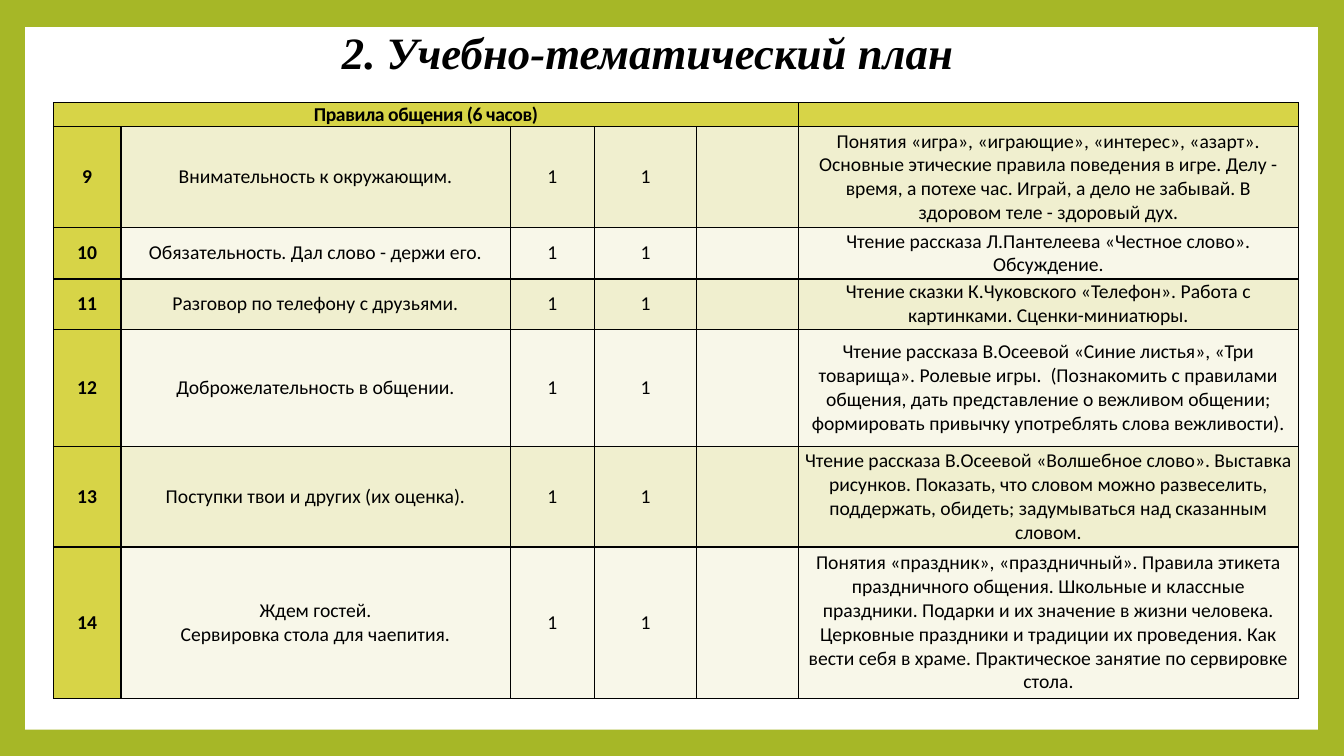
from lxml import etree
from pptx import Presentation
from pptx.dml.color import RGBColor
from pptx.enum.shapes import MSO_SHAPE
from pptx.enum.text import MSO_ANCHOR, PP_ALIGN
from pptx.oxml.ns import qn
from pptx.util import Inches, Pt

RECT = MSO_SHAPE.RECTANGLE
MIDDLE = MSO_ANCHOR.MIDDLE
CENTER = PP_ALIGN.CENTER

COLORS = {
    "frame": "A6B727",
    "panel": "FFFFFF",
    "ink": "000000",
    "head": "D7D447",
    "odd": "F0EFCF",
    "even": "F8F7E9",
}
TITLE_FONT = {"name": "Times New Roman", "size": Pt(32), "bold": True, "italic": True}
CELL_FONT = {"name": "Calibri", "size": Pt(14)}
CELL_BOX = {
    "margin_left": Inches(0.05),
    "margin_right": Inches(0.05),
    "margin_top": 0,
    "margin_bottom": 0,
    "vertical_anchor": MIDDLE,
}
TITLE_BOX = {
    "margin_left": Inches(0.1),
    "margin_right": Inches(0.1),
    "margin_top": 0,
    "margin_bottom": 0,
    "vertical_anchor": MIDDLE,
    "word_wrap": True,
}

COLS = [0.67, 3.86, 0.84, 1.01, 1.01, 4.96]
ROWS = [0.23, 1, 0.51, 0.5, 1.16, 1, 1.5]
HEAD = "Правила общения (6 часов)"
FIRST = 9
TOPICS = [
    ("Внимательность к окружающим.",
     "Понятия «игра», «играющие», «интерес», «азарт». Основные этические правила "
     "поведения в игре. Делу - время, а потехе час. Играй, а дело не забывай. "
     "В здоровом теле - здоровый дух."),
    ("Обязательность. Дал слово - держи его.",
     "Чтение рассказа Л.Пантелеева «Честное слово». Обсуждение."),
    ("Разговор по телефону с друзьями.",
     "Чтение сказки К.Чуковского «Телефон». Работа с картинками. Сценки-миниатюры."),
    ("Доброжелательность в общении.",
     "Чтение рассказа В.Осеевой «Синие листья», «Три товарища». Ролевые игры.  "
     "(Познакомить с правилами общения, дать представление о вежливом общении; "
     "формировать привычку употреблять слова вежливости)."),
    ("Поступки твои и других (их оценка).",
     "Чтение рассказа В.Осеевой «Волшебное слово». Выставка рисунков. Показать, что "
     "словом можно развеселить, поддержать, обидеть; задумываться над сказанным словом."),
    ("Ждем гостей.\nСервировка стола для чаепития.",
     "Понятия «праздник», «праздничный». Правила этикета праздничного общения. "
     "Школьные и классные праздники. Подарки и их значение в жизни человека. "
     "Церковные праздники и традиции их проведения. Как вести себя в храме. "
     "Практическое занятие по сервировке стола."),
]


def color(name):
    """Return the named colour."""
    return RGBColor.from_string(COLORS[name])


def apply(item, values):
    """Set each format value on the item."""
    for key, value in values.items():
        setattr(item, key, value)


def place(item, box):
    """Move the item to a box given in inches."""
    for key, value in zip(("left", "top", "width", "height"), box):
        setattr(item, key, Inches(value))


def style(frame, font):
    """Centre the paragraphs and format their runs."""
    for para in frame.paragraphs:
        para.alignment = CENTER
        for run in para.runs:
            apply(run.font, font)
            run.font.color.rgb = color("ink")
        if not para.runs:
            end = etree.SubElement(para._p, qn("a:endParaRPr"))
            end.set("sz", str(int(font["size"].pt * 100)))


def edge(cell):
    """Draw a thin line on all four sides of the cell."""
    props = cell._tc.get_or_add_tcPr()
    for spot, side in enumerate(("lnL", "lnR", "lnT", "lnB")):
        line = etree.Element(qn("a:" + side), w=str(Pt(1)))
        fill = etree.SubElement(line, qn("a:solidFill"))
        etree.SubElement(fill, qn("a:srgbClr"), val=COLORS["ink"])
        props.insert(spot, line)


def add_title(slide, box, text):
    """Place and format the slide title."""
    title = slide.shapes.title
    place(title, box)
    title.text = text
    apply(title.text_frame, TITLE_BOX)
    title.text_frame.paragraphs[0].line_spacing = 0.9
    style(title.text_frame, TITLE_FONT)


def add_panel(slide, box):
    """Lay the white panel over the frame colour, behind the title."""
    slide.background.fill.solid()
    slide.background.fill.fore_color.rgb = color("frame")
    panel = slide.shapes.add_shape(RECT, *map(Inches, box))
    panel.shadow.inherit = False
    panel.fill.solid()
    panel.fill.fore_color.rgb = color("panel")
    panel.line.fill.background()
    slide.shapes.title.element.addprevious(panel.element)


def add_plan(slide, box):
    """Build the table of lessons."""
    size = len(ROWS), len(COLS)
    table = slide.shapes.add_table(*size, *map(Inches, box)).table
    apply(table, {"first_row": False, "horz_banding": False})
    for col, width in zip(table.columns, COLS):
        col.width = Inches(width)
    for row, height in zip(table.rows, ROWS):
        row.height = Inches(height)
    data = [[HEAD] + [""] * 5]
    for num, (topic, work) in enumerate(TOPICS, FIRST):
        data.append([str(num), topic, "1", "1", "", work])
    for r, line in enumerate(data):
        for c, text in enumerate(line):
            cell = table.cell(r, c)
            cell.text = text
            apply(cell, CELL_BOX)
            head = r == 0 or c == 0
            style(cell.text_frame, {**CELL_FONT, "bold": head})
            cell.fill.solid()
            cell.fill.fore_color.rgb = color("head" if head else "odd" if r % 2 else "even")
            edge(cell)
    table.cell(0, 0).merge(table.cell(0, 4))
    run = table.cell(0, 0).text_frame.paragraphs[0].runs[0]
    run._r.get_or_add_rPr().set("spc", "-30")


def main():
    """Build and save the slide."""
    deck = Presentation()
    deck.slide_width, deck.slide_height = Inches(13.33), Inches(7.5)
    slide = deck.slides.add_slide(deck.slide_layouts[5])
    add_panel(slide, (0.25, 0.27, 12.82, 6.97))
    add_title(slide, (2.47, 0.25, 7.91, 0.59), "2. Учебно-тематический план")
    add_plan(slide, (0.53, 1.02, sum(COLS), sum(ROWS)))
    deck.save("out.pptx")


if __name__ == "__main__":
    main()
